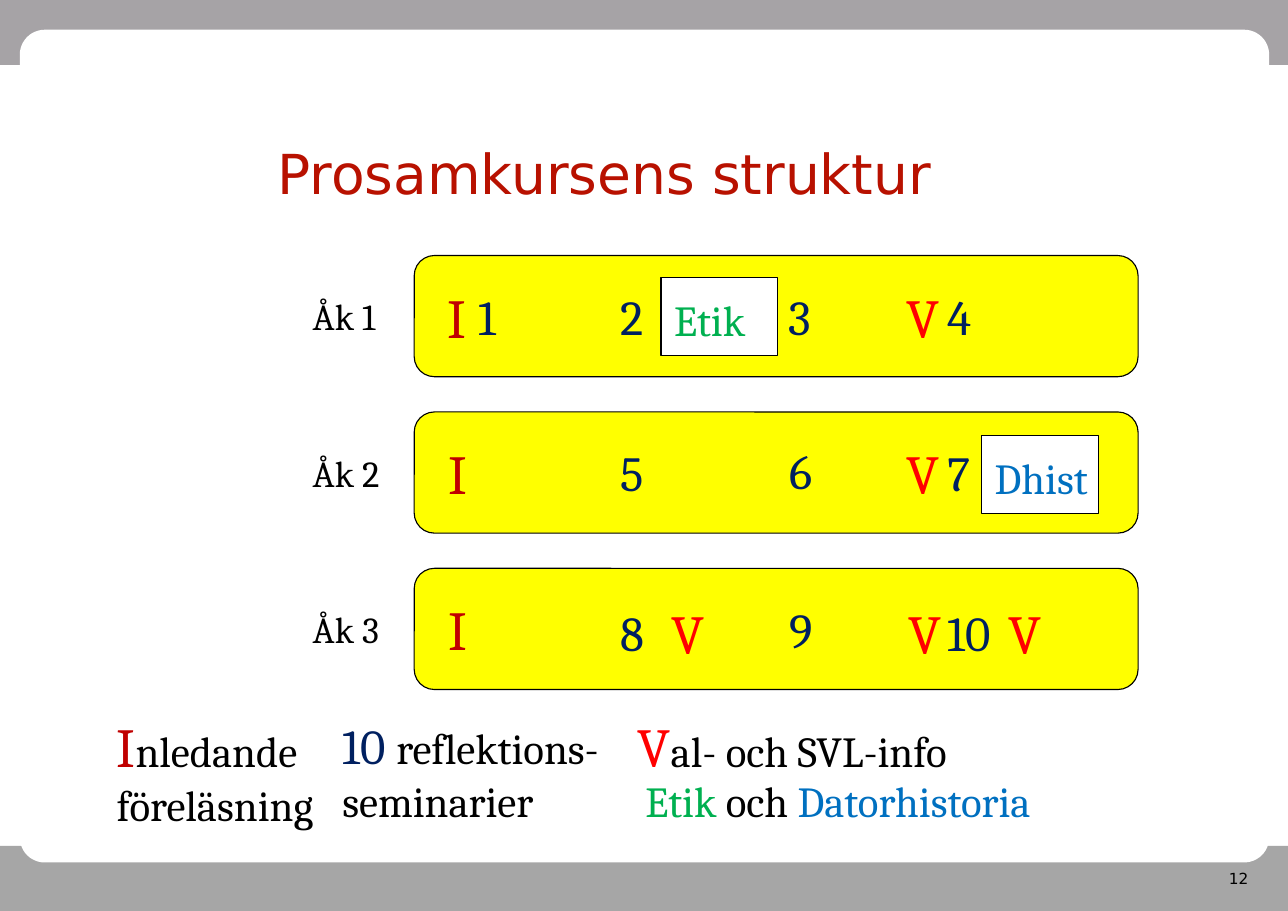
from typing import NamedTuple

from pptx import Presentation
from pptx import util as u
from pptx.dml.color import RGBColor
from pptx.enum import shapes, text

SERIF, SANS = "Cambria", "DejaVu Sans"
BLACK, WHITE, YELLOW = "000000", "FFFFFF", "FFFF00"
INTRO_RED, INFO_RED, NAVY = "C00000", "FF0000", "002060"
GREEN, BLUE = "00B050", "0070C0"
YEAR_TOP, YEAR_STEP = 2.32, 1.42


class Box(NamedTuple):
    left: float
    top: float
    width: float
    height: float


class Span(NamedTuple):
    words: str
    size: float
    color: str


class MarkStyle(NamedTuple):
    size: float
    color: str
    width: float
    height: float


class Mark(NamedTuple):
    words: str
    style: MarkStyle
    year: int
    left: float
    drop: float


class Topic(NamedTuple):
    words: str
    color: str
    left: float
    top: float


class Caption(NamedTuple):
    box: Box
    spans: list[Span]


INTRO = MarkStyle(36, INTRO_RED, 0.24, 0.71)
INFO = MarkStyle(36, INFO_RED, 0.37, 0.71)
SEMINAR = MarkStyle(32, NAVY, 0.31, 0.64)
LAST_SEMINAR = SEMINAR._replace(width=0.74)

MARKS = [
    Mark("I", INTRO, 0, 3.96, 0.2),
    Mark("I", INTRO, 1, 3.97, 0.2),
    Mark("I", INTRO, 2, 3.97, 0.2),
    Mark("1", SEMINAR, 0, 4.24, 0.23),
    Mark("2", SEMINAR, 0, 5.53, 0.23),
    Mark("3", SEMINAR, 0, 7.06, 0.23),
    Mark("4", SEMINAR, 0, 8.5, 0.23),
    Mark("5", SEMINAR, 1, 5.53, 0.23),
    Mark("6", SEMINAR, 1, 7.07, 0.21),
    Mark("7", SEMINAR, 1, 8.5, 0.23),
    Mark("8", SEMINAR, 2, 5.53, 0.26),
    Mark("9", SEMINAR, 2, 7.07, 0.23),
    Mark("10", LAST_SEMINAR, 2, 8.5, 0.26),
    Mark("V", INFO, 0, 8.13, 0.2),
    Mark("V", INFO, 1, 8.13, 0.2),
    Mark("V", INFO, 2, 6, 0.23),
    Mark("V", INFO, 2, 8.15, 0.23),
    Mark("V", INFO, 2, 9.06, 0.23),
]

TOPICS = [Topic("Etik", GREEN, 6, 2.52), Topic("Dhist", BLUE, 8.91, 3.95)]

LEGEND = [
    Caption(Box(0.96, 6.42, 2.05, 1.18),
            [Span("I", 36, INTRO_RED), Span("nledande föreläsning", 28, BLACK)]),
    Caption(Box(3.01, 6.45, 2.63, 1.11),
            [Span("10 ", 32, NAVY), Span("reflektions-seminarier", 28, BLACK)]),
    Caption(Box(5.69, 6.42, 4.31, 0.71),
            [Span("V", 36, INFO_RED), Span("al- och SVL-info", 28, BLACK)]),
    Caption(Box(5.76, 6.98, 4.96, 0.57),
            [Span("Etik ", 28, GREEN), Span("och ", 28, BLACK),
             Span("Datorhistoria", 28, BLUE)]),
]


def rgb(color: str) -> RGBColor:
    return RGBColor.from_string(color)


def inches(box: Box) -> list[u.Length]:
    return [u.Inches(length) for length in box]


def add_panel(slide, kind, box: Box, fill: str, outlined: bool = False):
    panel = slide.shapes.add_shape(kind, *inches(box))
    panel.shadow.inherit = False
    panel.fill.solid()
    panel.fill.fore_color.rgb = rgb(fill)
    if outlined:
        panel.line.color.rgb = rgb(BLACK)
        panel.line.width = u.Pt(0.75)
    else:
        panel.line.fill.background()
    return panel


def style_font(font, span: Span) -> None:
    font.size = u.Pt(span.size)
    font.color.rgb = rgb(span.color)


def add_text(slide, box: Box, spans: list[Span], face: str = SERIF,
             margins: tuple[float, float] = (0.1, 0.05)):
    frame = slide.shapes.add_textbox(*inches(box)).text_frame
    frame.word_wrap = True
    frame.margin_left = frame.margin_right = u.Inches(margins[0])
    frame.margin_top = frame.margin_bottom = u.Inches(margins[1])
    paragraph = frame.paragraphs[0]
    paragraph.font.name = face
    for span in spans:
        run = paragraph.add_run()
        run.text = span.words
        style_font(paragraph.font if len(spans) == 1 else run.font, span)
    return frame


def add_frame(slide) -> None:
    add_panel(slide, shapes.MSO_SHAPE.RECTANGLE, Box(0, 0, 11.69, 0.59), "A6A3A6")
    add_panel(slide, shapes.MSO_SHAPE.RECTANGLE, Box(0, 7.68, 11.69, 0.59), "A6A6A6")
    page = add_panel(slide, shapes.MSO_SHAPE.ROUNDED_RECTANGLE,
                     Box(0.18, 0.27, 11.34, 7.56), WHITE)
    page.adjustments[0] = 0.03
    number = add_text(slide, Box(9, 7.83, 2.44, 0.3), [Span("12", 10, BLACK)],
                      SANS, (0.11, 0.06))
    number.paragraphs[0].alignment = text.PP_ALIGN.RIGHT
    title = add_text(slide, Box(2.41, 1.05, 8.03, 1.04),
                     [Span("Prosamkursens struktur", 36, "B81100")],
                     SANS, (0.11, 0.06))
    title.vertical_anchor = text.MSO_ANCHOR.MIDDLE


def add_year(slide, year: int) -> None:
    top = YEAR_TOP + year * YEAR_STEP
    add_panel(slide, shapes.MSO_SHAPE.FLOWCHART_ALTERNATE_PROCESS,
              Box(3.76, top, 6.57, 1.1), YELLOW, outlined=True)
    add_text(slide, Box(2.74, top + 0.3, 1.02, 0.5),
             [Span(f"Åk {year + 1}", 24, BLACK)])


def add_mark(slide, mark: Mark) -> None:
    style = mark.style
    top = YEAR_TOP + mark.year * YEAR_STEP + mark.drop
    add_text(slide, Box(mark.left, top, style.width, style.height),
             [Span(mark.words, style.size, style.color)])


def add_topic(slide, topic: Topic) -> None:
    add_panel(slide, shapes.MSO_SHAPE.RECTANGLE,
              Box(topic.left, topic.top, 1.06, 0.71), WHITE, outlined=True)
    add_text(slide, Box(topic.left + 0.02, topic.top + 0.1, 1.08, 0.57),
             [Span(topic.words, 28, topic.color)])


def main() -> None:
    deck = Presentation()
    deck.slide_width, deck.slide_height = u.Inches(11.69), u.Inches(8.27)
    slide = deck.slides.add_slide(deck.slide_layouts[6])
    add_frame(slide)
    for year in range(3):
        add_year(slide, year)
    for mark in MARKS:
        add_mark(slide, mark)
    for topic in TOPICS:
        add_topic(slide, topic)
    for caption in LEGEND:
        add_text(slide, caption.box, caption.spans)
    deck.save("out.pptx")


if __name__ == "__main__":
    main()
